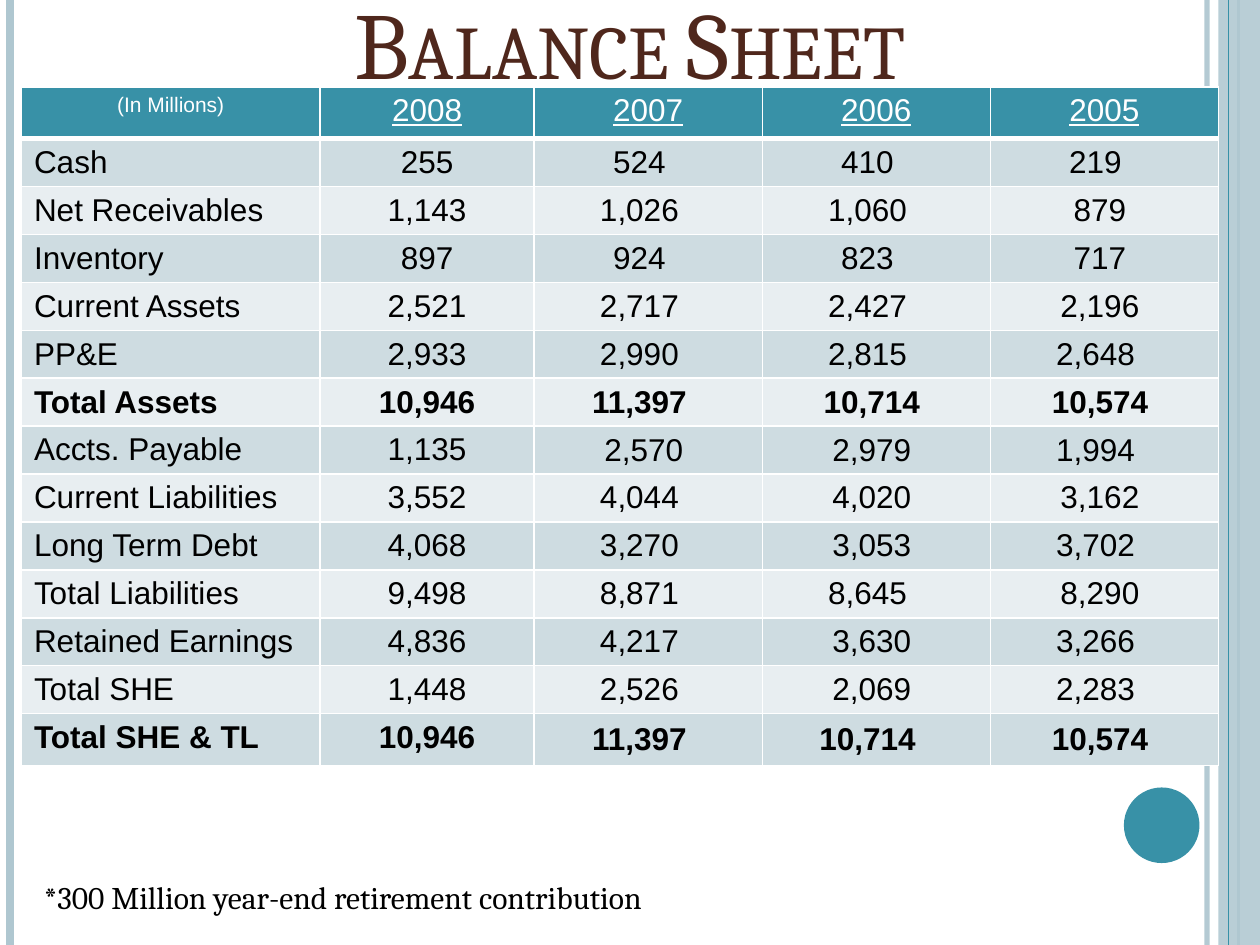
from lxml.etree import SubElement
from pptx import Presentation
from pptx.dml.color import RGBColor
from pptx.enum.shapes import MSO_CONNECTOR as CONNECTOR, MSO_SHAPE as SHAPE
from pptx.enum.text import MSO_ANCHOR as ANCHOR, MSO_AUTO_SIZE as AUTO_SIZE, PP_ALIGN as ALIGN
from pptx.oxml.ns import qn
from pptx.util import Inches, Pt

WHITE = RGBColor(0xFF, 0xFF, 0xFF)
BLACK = RGBColor(0x00, 0x00, 0x00)
BROWN = RGBColor(0x4F, 0x27, 0x1C)
TEAL = RGBColor(0x38, 0x91, 0xA7)
PALE_BLUE = RGBColor(0xAF, 0xC7, 0xD0)
DARK_BAND = RGBColor(0xCE, 0xDC, 0xE1)
LIGHT_BAND = RGBColor(0xE8, 0xEE, 0xF1)

HEADER = ("(In Millions)", "2008", "2007", "2006", "2005")
ACCOUNTS = [
    ("Cash", "255", "524", "410", "219"),
    ("Net Receivables", "1,143", "1,026", "1,060", "879"),
    ("Inventory", "897", "924", "823", "717"),
    ("Current Assets", "2,521", "2,717", "2,427", "2,196"),
    ("PP&E", "2,933", "2,990", "2,815", "2,648"),
    ("Total Assets", "10,946", "11,397", "10,714", "10,574"),
    ("Accts. Payable", "1,135", "2,570", "2,979", "1,994"),
    ("Current Liabilities", "3,552", "4,044", "4,020", "3,162"),
    ("Long Term Debt", "4,068", "3,270", "3,053", "3,702"),
    ("Total Liabilities", "9,498", "8,871", "8,645", "8,290"),
    ("Retained Earnings", "4,836", "4,217", "3,630", "3,266"),
    ("Total SHE", "1,448", "2,526", "2,069", "2,283"),
    ("Total SHE & TL", "10,946", "11,397", "10,714", "10,574"),
]
BOLD_ROWS = (6, 13)
NARROW_INDENT_ROWS = {2: (7,), 3: (6, 7, 8, 9, 11, 12), 4: (2, 3, 4, 6, 8, 10, 13)}


def format_runs(paragraph, font_name, size, color):
    for run in paragraph.runs:
        run.font.name = font_name
        run.font.size = Pt(size)
        run.font.color.rgb = color


def set_alpha(element, percent):
    color = element.find(".//" + qn("a:srgbClr"))
    SubElement(color, qn("a:alpha"), val=str(percent * 1000))


presentation = Presentation()
presentation.slide_width = Inches(10)
presentation.slide_height = Inches(7.5)
slide = presentation.slides.add_slide(presentation.slide_layouts[5])
shapes = slide.shapes

side_band = shapes.add_shape(SHAPE.RECTANGLE, Inches(9.67), 0, Inches(0.33), Inches(7.5))
circle = shapes.add_shape(SHAPE.OVAL, Inches(8.92), Inches(6.25), Inches(0.6), Inches(0.6))
for shape, color in ((side_band, PALE_BLUE), (circle, TEAL)):
    shape.shadow.inherit = False
    shape.fill.solid()
    shape.fill.fore_color.rgb = color
    shape.line.fill.background()
set_alpha(side_band.fill._xPr, 87)

for x, color, width, opacity in (
    (9.58, PALE_BLUE, 3, 93),
    (0.08, PALE_BLUE, 4.5, 100),
    (9.75, TEAL, 0.75, 100),
    (9.83, PALE_BLUE, 1.5, 100),
):
    stripe = shapes.add_connector(CONNECTOR.STRAIGHT, Inches(x), 0, Inches(x), Inches(7.5))
    stripe.line.color.rgb = color
    stripe.line.width = Pt(width)
    SubElement(stripe._element.spPr, qn("a:effectLst"))
    if opacity < 100:
        set_alpha(stripe._element.spPr, opacity)

title = shapes.title
title.left, title.top, title.width, title.height = Inches(0.5), 0, Inches(9), Inches(0.83)
title.text_frame.text = "Balance Sheet"
title.text_frame.auto_size = AUTO_SIZE.NONE
title.text_frame.vertical_anchor = ANCHOR.BOTTOM
title_paragraph = title.text_frame.paragraphs[0]
title_paragraph.alignment = ALIGN.CENTER
format_runs(title_paragraph, "Cambria", 54, BROWN)
title_paragraph.runs[0].font._element.set("cap", "small")

rows = [HEADER] + ACCOUNTS
column_widths = (2.37, 1.7, 1.81, 1.81, 1.81)
table = shapes.add_table(
    len(rows), len(HEADER), Inches(0.17), Inches(0.69), Inches(9.5), Inches(5.38)
).table
for column, width in zip(table.columns, column_widths):
    column.width = Inches(width)

for row_index, values in enumerate(rows):
    is_header = row_index == 0
    is_edge = row_index in (0, len(rows) - 1)
    table.rows[row_index].height = Inches(0.41 if is_edge else 0.38)
    for column_index, value in enumerate(values):
        cell = table.cell(row_index, column_index)
        cell.text_frame.text = value
        paragraph = cell.text_frame.paragraphs[0]
        is_label = column_index == 0
        paragraph.alignment = ALIGN.LEFT if is_label and not is_header else ALIGN.CENTER
        format_runs(
            paragraph, "Arial", 12 if is_header and is_label else 18, WHITE if is_header else BLACK
        )
        font = paragraph.runs[0].font
        font.bold = row_index in BOLD_ROWS
        font.underline = is_header and not is_label

        if not is_header and column_index >= 2:
            is_narrow = row_index in NARROW_INDENT_ROWS[column_index]
            cell.vertical_anchor = ANCHOR.MIDDLE
            cell.margin_left = cell.margin_top = cell.margin_bottom = Inches(0.02)
            cell.margin_right = Inches(0.09 if is_narrow else 0.16)

        cell_properties = cell._tc.get_or_add_tcPr()
        for side in ("lnL", "lnR", "lnT", "lnB"):
            width = Pt(3 if is_header and side == "lnB" else 1)
            border = SubElement(cell_properties, qn("a:" + side), w=str(width))
            border_fill = SubElement(border, qn("a:solidFill"))
            SubElement(border_fill, qn("a:srgbClr"), val=str(WHITE))
        cell.fill.solid()
        band = DARK_BAND if row_index % 2 else LIGHT_BAND
        cell.fill.fore_color.rgb = TEAL if is_header else band

footnote = shapes.add_textbox(Inches(0.25), Inches(6.92), Inches(9.33), Inches(0.4))
footnote.text_frame.word_wrap = True
footnote.text_frame.auto_size = AUTO_SIZE.SHAPE_TO_FIT_TEXT
footnote.text_frame.text = "*300 Million year-end retirement contribution"
format_runs(footnote.text_frame.paragraphs[0], "Cambria", 18, BLACK)

presentation.save("out.pptx")
